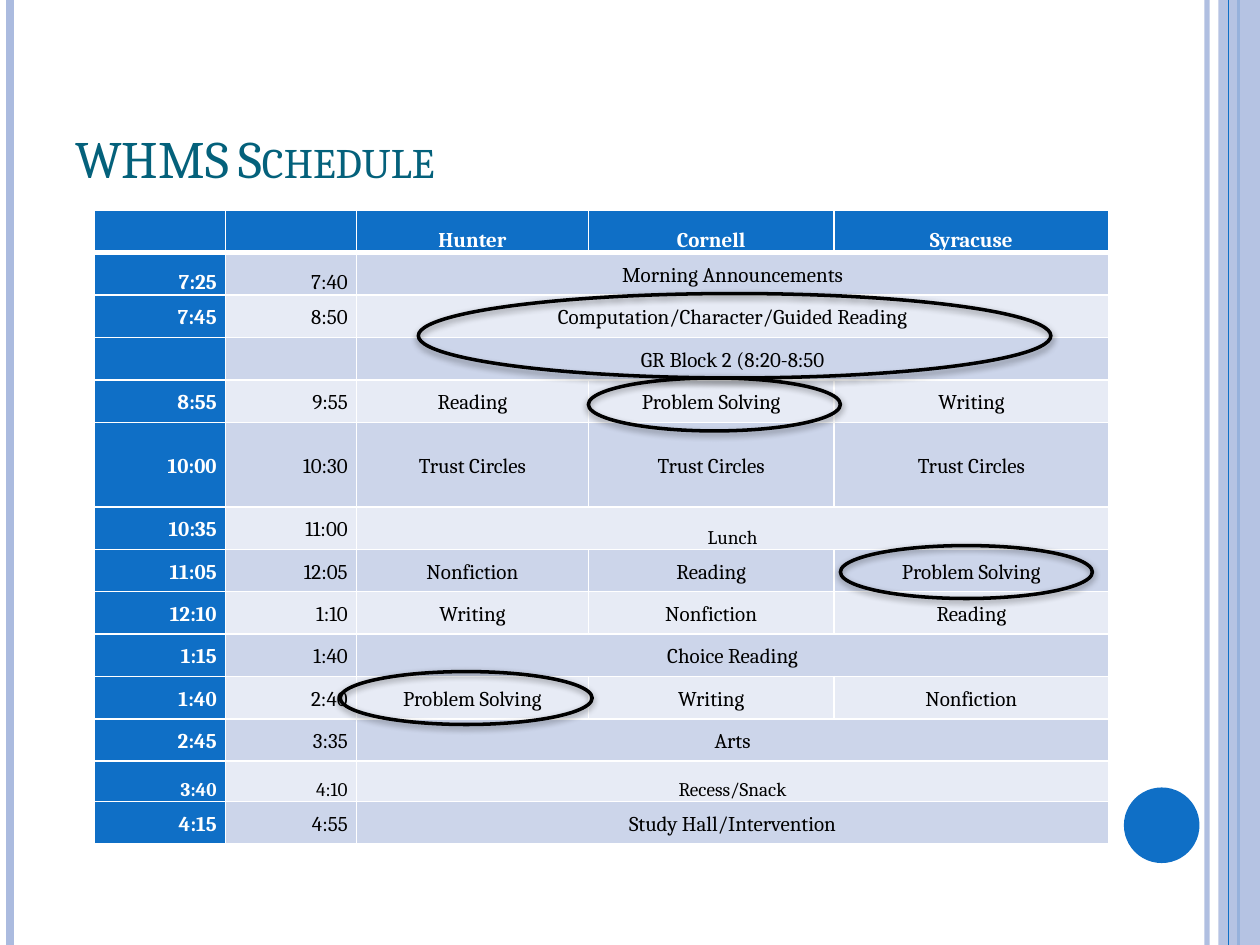
import pptx
import pptx.dml.color
import pptx.enum.shapes
import pptx.enum.text
import pptx.oxml
import pptx.oxml.ns
import pptx.util
from pptx.util import Inches

COLORS = {"blue": "0F6FC6", "pale": "ABBBDF", "title": "04617B", "white": "FFFFFF",
          "black": "000000", "odd": "CCD5EA", "even": "E7EBF5"}
FONT = "Cambria"
NS = pptx.oxml.ns.nsdecls("a")
SHAPES = pptx.enum.shapes.MSO_SHAPE
ALIGN = pptx.enum.text.PP_ALIGN
ANCHOR = pptx.enum.text.MSO_ANCHOR


def rgb(name):
    return pptx.dml.color.RGBColor.from_string(COLORS[name])


def set_alpha(fill, percent):
    """Make a solid fill partly transparent."""
    color = fill._xPr.find(".//" + pptx.oxml.ns.qn("a:srgbClr"))
    color.append(pptx.oxml.parse_xml(f'<a:alpha {NS} val="{percent * 1000}"/>'))


prs = pptx.Presentation()
prs.slide_width, prs.slide_height = Inches(10), Inches(7.5)
slide = prs.slides.add_slide(prs.slide_layouts[6])
shapes = slide.shapes

# Side stripes, band and dot: x, colour, width, opacity
stripes = [(9.58, "pale", 3, 93), (0.08, "pale", 4.5, 100),
           (9.83, "blue", 1.5, 100), (9.75, "blue", 0.75, 100)]
for x, color, width, opacity in stripes:
    if x == 9.75:  # the band lies under the last stripe only
        band = shapes.add_shape(SHAPES.RECTANGLE, Inches(9.67), 0, Inches(0.33), Inches(7.5))
        band.shadow.inherit = False
        band.fill.solid()
        band.fill.fore_color.rgb = rgb("pale")
        set_alpha(band.fill, 87)
        band.line.fill.background()
    stripe = shapes.add_connector(pptx.enum.shapes.MSO_CONNECTOR.STRAIGHT,
                                  Inches(x), 0, Inches(x), Inches(7.5))
    stripe.line.color.rgb = rgb(color)
    stripe.line.width = pptx.util.Pt(width)
    if opacity < 100:
        set_alpha(stripe.line.fill, opacity)
    stripe._element.spPr.append(pptx.oxml.parse_xml(f"<a:effectLst {NS}/>"))

dot = shapes.add_shape(SHAPES.OVAL, Inches(8.92), Inches(6.25), Inches(0.6), Inches(0.6))
dot.shadow.inherit = False
dot.fill.solid()
dot.fill.fore_color.rgb = rgb("blue")
dot.line.fill.background()

# Title
heading = shapes.add_textbox(Inches(0.5), Inches(0.3), Inches(8.17), Inches(1.25)).text_frame
heading.word_wrap = True
heading.vertical_anchor = ANCHOR.BOTTOM
title = heading.paragraphs[0]
title.text = "WHMS Schedule"
title.font.name, title.font.size = FONT, pptx.util.Pt(30)
title.font.color.rgb = rgb("title")
title.runs[0].font._element.set("cap", "small")

# Schedule: rows with three entries span all the schools
schedule = [
    ("", "", "Hunter", "Cornell", "Syracuse"),
    ("7:25", "7:40", "Morning Announcements"),
    ("7:45", "8:50", "Computation/Character/Guided Reading"),
    ("", "", "GR Block 2 (8:20-8:50"),
    ("8:55", "9:55", "Reading", "Problem Solving", "Writing"),
    ("10:00", "10:30", "Trust Circles", "Trust Circles", "Trust Circles"),
    ("10:35", "11:00", "Lunch"),
    ("11:05", "12:05", "Nonfiction", "Reading", "Problem Solving"),
    ("12:10", "1:10", "Writing", "Nonfiction", "Reading"),
    ("1:15", "1:40", "Choice Reading"),
    ("1:40", "2:40", "Problem Solving", "Writing", "Nonfiction"),
    ("2:45", "3:35", "Arts"),
    ("3:40", "4:10", "Recess/Snack"),
    ("4:15", "4:55", "Study Hall/Intervention"),
]
TRUST_ROW, RECESS_ROW = 5, 12
bottom_cells = {(0, 2), (0, 3), (0, 4), (1, 0), (1, 1), (6, 2), (12, 0), (12, 1), (12, 2)}
small_cells = {(6, 2), (12, 0), (12, 1), (12, 2)}

table_height, recess_height = Inches(5.03), Inches(0.32)
row_height = (table_height - recess_height) // 14
table = shapes.add_table(len(schedule), 5, Inches(0.75), Inches(1.67),
                         Inches(8.05), table_height).table
for column, width in zip(table.columns, (1.04, 1.04, 1.84, 1.95, 2.18)):
    column.width = Inches(width)

for r, entries in enumerate(schedule):
    table.rows[r].height = {TRUST_ROW: 2 * row_height, RECESS_ROW: recess_height}.get(r, row_height)
    if len(entries) == 3:
        table.cell(r, 2).merge(table.cell(r, 4))
    for c in range(5):
        cell = table.cell(r, c)
        accent = r == 0 or c == 0
        cell.fill.solid()
        cell.fill.fore_color.rgb = rgb("blue" if accent else "odd" if r % 2 else "even")
        thick_side = {0: "B", 1: "T"}.get(r)
        for i, side in enumerate("LRTB"):
            width = pptx.util.Pt(3 if side == thick_side else 1)
            cell._tc.tcPr.insert(i, pptx.oxml.parse_xml(
                f'<a:ln{side} {NS} w="{width}"><a:solidFill>'
                f'<a:srgbClr val="{COLORS["white"]}"/></a:solidFill></a:ln{side}>'))
        cell.margin_left = cell.margin_right = Inches(0.07)
        cell.margin_top = cell.margin_bottom = 0
        cell.vertical_anchor = ANCHOR.BOTTOM if (r, c) in bottom_cells else ANCHOR.MIDDLE
        entry = cell.text_frame.paragraphs[0]
        if c < len(entries) and entries[c]:
            entry.text = entries[c]
        entry.alignment = ALIGN.RIGHT if c < 2 else ALIGN.CENTER
        entry.line_spacing = 1.15
        entry.font.name = FONT
        entry.font.size = pptx.util.Pt(11 if (r, c) in small_cells else 12)
        entry.font.bold = accent
        entry.font.color.rgb = rgb("white" if accent else "black")

# Rings around the maths lessons
rings = [(3.32, 2.33, 5.02, 0.67), (4.67, 3, 2, 0.42), (2.7, 5.33, 2, 0.42), (6.67, 4.33, 2, 0.42)]
for box in rings:
    ring = shapes.add_shape(SHAPES.OVAL, *map(Inches, box))
    ring.fill.background()
    ring.line.color.rgb = rgb("black")
    ring.line.width = pptx.util.Pt(2)
    ring._element.spPr.append(pptx.oxml.parse_xml(
        f'<a:effectLst {NS}><a:outerShdw blurRad="{pptx.util.Pt(4)}" dist="{pptx.util.Pt(1.6)}" '
        f'dir="5400000" rotWithShape="0"><a:srgbClr val="{COLORS["black"]}">'
        '<a:alpha val="42000"/></a:srgbClr></a:outerShdw></a:effectLst>'))

prs.save("out.pptx")
